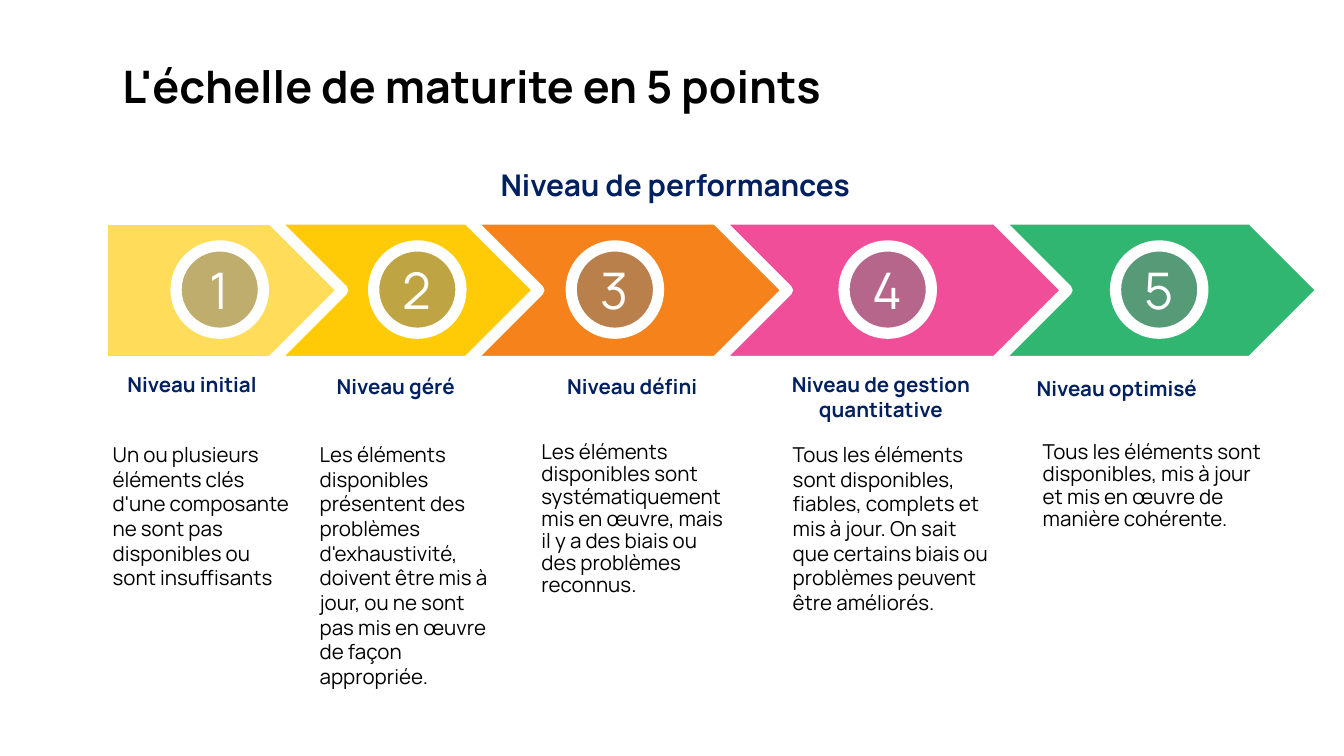
from lxml.etree import SubElement
from pptx import Presentation
from pptx.dml.color import RGBColor
from pptx.enum.shapes import MSO_SHAPE
from pptx.enum.text import MSO_ANCHOR, PP_ALIGN
from pptx.oxml.ns import qn
from pptx.util import Inches, Pt

WHITE = RGBColor(0xFF, 0xFF, 0xFF)
BLACK = RGBColor(0x00, 0x00, 0x00)
NAVY = RGBColor(0x00, 0x20, 0x60)
GRAY = RGBColor(0x7F, 0x7F, 0x7F)
AMBER = RGBColor(0xFF, 0xCB, 0x03)
YELLOW = RGBColor(0xFF, 0xCB, 0x07)
ORANGE = RGBColor(0xF5, 0x82, 0x1A)
PINK = RGBColor(0xF0, 0x4E, 0x98)
GREEN = RGBColor(0x30, 0xB6, 0x71)

TITLE = {"size": Pt(24), "bold": True}
HEADING = {"size": Pt(16), "bold": True}
LABEL = {"size": Pt(11), "bold": True}
BODY = {"size": Pt(11), "bold": False}
NUMBER = {"size": Pt(27), "bold": False}

BAND_TOP, BAND_HEIGHT = 1.63, 1.06
CIRCLE_TOP, CIRCLE_SIZE = 1.83, 0.65
BODY_TOP = 3.24

prs = Presentation()
prs.slide_width, prs.slide_height = Inches(10), Inches(10 * 9 / 16)
s = prs.slides.add_slide(prs.slide_layouts[6])


def add_outlined(kind, x, y, w, h, color, opacity=100):
    """Add a shape with a thick white outline; opacity is in percent."""
    sp = s.shapes.add_shape(kind, Inches(x), Inches(y), Inches(w), Inches(h))
    sp.shadow.inherit = False
    sp.fill.solid()
    sp.fill.fore_color.rgb = color
    sp.line.color.rgb = WHITE
    sp.line.width = Pt(6)
    if opacity < 100:
        clr = sp.fill._xPr.find(qn("a:solidFill"))[0]
        SubElement(clr, qn("a:alpha"), val=str(opacity * 1000))
    return sp


def write(sp, text, style, color, align=PP_ALIGN.LEFT, spacing=None):
    tf = sp.text_frame
    tf.word_wrap = True
    p = tf.paragraphs[0]
    p.alignment = align
    p.line_spacing = spacing
    r = p.add_run()
    r.text = text
    r.font.name = "Manrope"
    r.font.color.rgb = color
    for name, value in style.items():
        setattr(r.font, name, value)


# Arrow band: left, width, colour, opacity
arrows = [
    (MSO_SHAPE.RECTANGLE, 0.76, 3.18, AMBER, 65),
    (MSO_SHAPE.CHEVRON, 2.02, 2.91, YELLOW, 100),
    (MSO_SHAPE.CHEVRON, 3.48, 2.41, ORANGE, 100),
    (MSO_SHAPE.CHEVRON, 5.33, 2.66, PINK, 100),
    (MSO_SHAPE.CHEVRON, 7.41, 2.43, GREEN, 100),
]
for kind, x, w, color, opacity in arrows:
    add_outlined(kind, x, BAND_TOP, w, BAND_HEIGHT, color, opacity)

# Numbered circles
for number, x in enumerate([1.31, 2.78, 4.25, 6.28, 8.3], start=1):
    sp = add_outlined(MSO_SHAPE.OVAL, x, CIRCLE_TOP, CIRCLE_SIZE, CIRCLE_SIZE, GRAY, 50)
    tf = sp.text_frame
    tf.vertical_anchor = MSO_ANCHOR.MIDDLE
    for side in ("left", "right", "top", "bottom"):
        setattr(tf, f"margin_{side}", Inches(0.1))
    write(sp, str(number), NUMBER, WHITE, PP_ALIGN.CENTER)

# Title and heading
sp = s.shapes.add_textbox(Inches(0.84), Inches(0.24), Inches(8.61), Inches(0.84))
tf = sp.text_frame
tf.vertical_anchor = MSO_ANCHOR.MIDDLE
tf.margin_left = tf.margin_right = Inches(0.07)
tf.margin_top = tf.margin_bottom = Inches(0.04)
write(sp, "L'échelle de maturite en 5 points", TITLE, BLACK, spacing=0.9)

sp = s.shapes.add_textbox(Inches(2.02), Inches(1.19), Inches(6.01), Inches(0.37))
write(sp, "Niveau de performances", HEADING, NAVY, PP_ALIGN.CENTER)

# Levels: label, its (left, top, width, height), description, its (left, width, height), spacing
levels = [
    ("Niveau initial", (0.78, 2.72, 1.3, 0.29),
     "Un ou plusieurs éléments clés d'une composante ne sont pas disponibles "
     "ou sont insuffisants", (0.74, 1.53, 1.4), None),
    ("Niveau géré", (2.09, 2.73, 1.71, 0.29),
     "Les éléments disponibles présentent des problèmes d'exhaustivité, doivent "
     "être mis à jour, ou ne sont pas mis en œuvre de façon appropriée.",
     (2.28, 1.53, 1.95), None),
    ("Niveau défini", (3.94, 2.73, 1.53, 0.29),
     "Les éléments disponibles sont systématiquement mis en œuvre, mais il y a "
     "des biais ou des problèmes reconnus.", (3.93, 1.57, 1.44), 0.9),
    ("Niveau de gestion quantitative", (5.71, 2.72, 1.69, 0.47),
     "Tous les éléments sont disponibles, fiables, complets et mis à jour. On sait "
     "que certains biais ou problèmes peuvent être améliorés.",
     (5.8, 1.68, 1.58), None),
    ("Niveau optimisé", (7.44, 2.75, 1.74, 0.29),
     "Tous les éléments sont disponibles, mis à jour et mis en œuvre de manière "
     "cohérente.", (7.66, 1.92, 0.94), 0.9),
]
for label, label_box, description, (x, w, h), spacing in levels:
    sp = s.shapes.add_textbox(*[Inches(v) for v in label_box])
    write(sp, label, LABEL, NAVY, PP_ALIGN.CENTER)
    sp = s.shapes.add_textbox(Inches(x), Inches(BODY_TOP), Inches(w), Inches(h))
    write(sp, description, BODY, BLACK, spacing=spacing)

prs.save("out.pptx")
